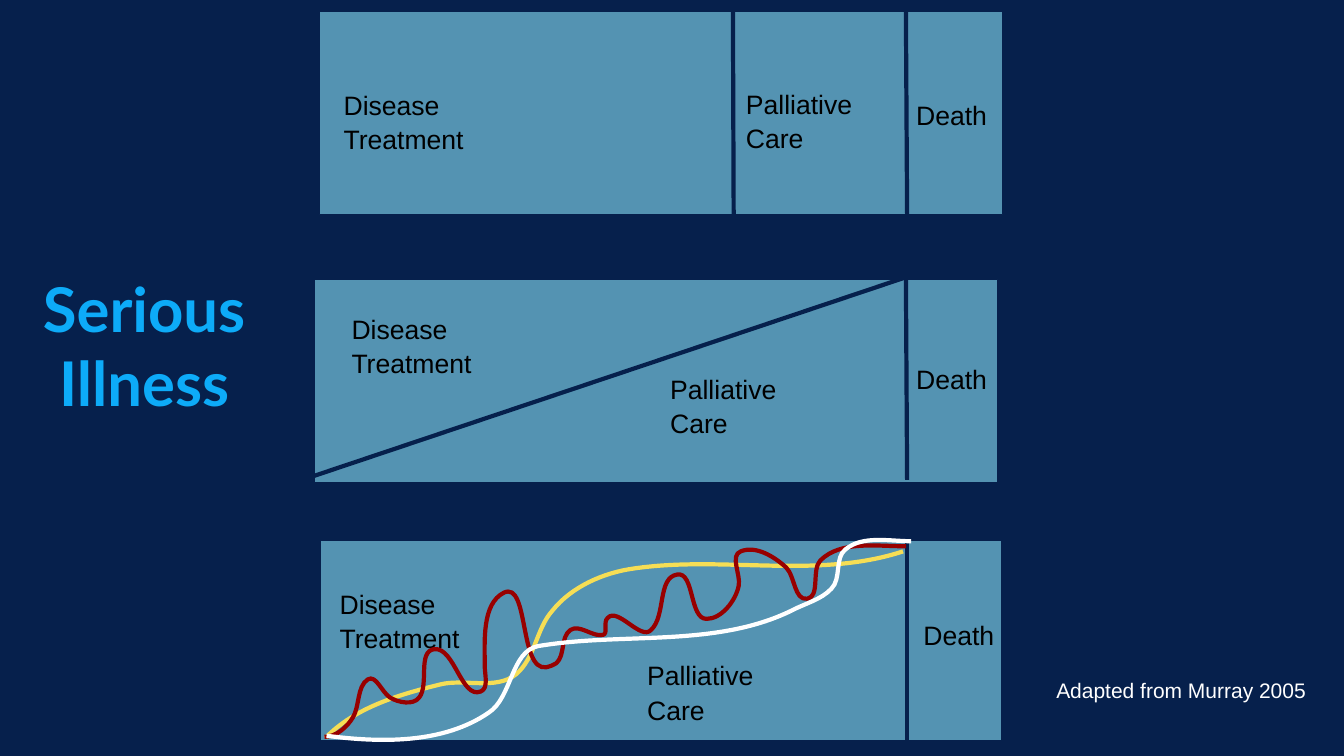
from lxml import etree
from pptx import Presentation
from pptx import util as u
from pptx.dml.color import RGBColor
from pptx.enum import shapes, text
from pptx.oxml.ns import qn

COLORS = {
    "navy": "06204C",
    "panel": "5493B2",
    "title": "0DABF8",
    "black": "000000",
    "white": "FFFFFF",
    "yellow": "F6DE55",
    "red": "980000",
}

LABEL = {"name": "Arial", "size": u.Pt(19), "color": "black"}
CREDIT = {"name": "Arial", "size": u.Pt(15), "color": "white"}
TITLE = {"name": "Lato", "size": u.Pt(44), "bold": True, "color": "title"}

PANEL_SIZE = (17.22, 5.11)
PANELS = [(8.05, 0.3, 0.75), (7.92, 7.04, 0.75), (8.05, 13.59, 3)]

DIVIDERS = [
    (18.47, 0.23, 18.49, 5.41),
    (22.83, 0.23, 22.86, 5.41),
    (22.83, 6.91, 22.86, 12.09),
    (22.86, 13.59, 22.86, 18.67),
    (7.92, 11.99, 22.76, 7.01),
]

LABELS = {
    ("Disease Treatment", 5.56, 2.31): [(8.33, 1.85), (8.53, 7.49), (8.23, 14.43)],
    ("Palliative Care", 4.5, 2.31): [(18.47, 1.83), (16.56, 9.02), (15.98, 16.23)],
    ("Death", 3.28, 1.5): [(22.76, 2.11), (22.76, 8.76), (22.94, 15.21)],
}

CURVE_UNIT = u.Cm(0.0254)
CURVES = {
    "yellow": [
        (323, 732), (352, 702), (396, 689), (437, 679),
        (461, 673), (492, 685), (512, 669), (531, 653), (532, 624), (548, 606),
        (567, 582), (599, 568), (629, 564), (717, 551), (811, 575), (896, 547),
    ],
    "red": [
        (322, 731), (333, 731), (344, 722), (350, 712),
        (357, 701), (354, 681), (365, 674), (373, 669), (379, 687), (387, 692),
        (395, 697), (410, 700), (416, 692), (426, 679), (414, 646), (431, 644),
        (451, 642), (458, 694), (477, 686), (485, 683), (481, 669), (481, 661),
        (481, 636), (478, 599), (500, 588), (525, 576), (515, 666), (542, 662),
        (546, 661), (549, 660), (552, 658), (561, 650), (556, 632), (566, 625),
        (575, 619), (588, 632), (598, 630), (604, 629), (598, 617), (603, 613),
        (613, 602), (636, 636), (646, 625), (661, 611), (652, 573), (672, 570),
        (689, 567), (684, 614), (701, 614), (716, 614), (730, 596), (733, 581),
        (735, 570), (724, 551), (735, 547), (750, 541), (768, 552), (780, 563),
        (789, 572), (788, 596), (801, 594), (814, 592), (805, 565), (814, 556),
        (834, 536), (870, 542), (899, 542),
    ],
    "white": [
        (324, 730), (378, 737), (440, 738), (485, 707),
        (508, 692), (507, 646), (534, 641), (617, 627), (709, 643), (785, 606),
        (798, 599), (815, 595), (825, 584), (835, 574), (828, 553), (839, 545),
        (856, 531), (882, 537), (904, 537),
    ],
}


class SlideBuilder:
    def __init__(self, slide):
        self.s = slide
        self.fill(slide.background.fill, "navy")

    def fill(self, fill, color):
        fill.solid()
        fill.fore_color.rgb = RGBColor.from_string(COLORS[color])

    def stroke(self, line, color, width):
        self.fill(line.fill, color)
        line.width = u.Pt(width)

    def place(self, sp, *box):
        for key, value in zip(("left", "top", "width", "height"), box):
            setattr(sp, key, u.Cm(value))

    def set_text(self, tf, content, style, inset, spacing):
        tf.word_wrap = True
        tf.auto_size = text.MSO_AUTO_SIZE.NONE
        for side, value in zip(("left", "top", "right", "bottom"), inset):
            setattr(tf, "margin_" + side, u.Cm(value))
        p = tf.paragraphs[0]
        p.line_spacing = spacing
        r = p.add_run()
        r.text = content
        for key, value in style.items():
            if key == "color":
                r.font.color.rgb = RGBColor.from_string(COLORS[value])
            else:
                setattr(r.font, key, value)
        return p

    def title(self, content, *box):
        sp = self.s.shapes.title
        self.place(sp, *box)
        p = self.set_text(sp.text_frame, content, TITLE, (0, 0.03, 0, 0.03), 1.0)
        p.alignment = text.PP_ALIGN.CENTER
        sp.text_frame.vertical_anchor = text.MSO_ANCHOR.MIDDLE

    def label(self, content, style, *box):
        sp = self.s.shapes.add_textbox(*map(u.Cm, box))
        self.set_text(sp.text_frame, content, style, [0.33] * 4, 1.07)

    def panel(self, left, top, border):
        box = map(u.Cm, (left, top, *PANEL_SIZE))
        sp = self.s.shapes.add_shape(shapes.MSO_SHAPE.RECTANGLE, *box)
        sp.shadow.inherit = False
        self.fill(sp.fill, "panel")
        self.stroke(sp.line, "navy", border)

    def divider(self, *ends):
        line = self.s.shapes.add_connector(shapes.MSO_CONNECTOR.STRAIGHT, *map(u.Cm, ends))
        self.stroke(line.line, "navy", 3)
        etree.SubElement(line._element.spPr, qn("a:effectLst"))

    def curve(self, color, points):
        builder = self.s.shapes.build_freeform(*points[0], scale=CURVE_UNIT)
        builder.add_line_segments(points[1:], close=False)
        sp = builder.convert_to_shape()
        sp.shadow.inherit = False
        sp.fill.background()
        self.stroke(sp.line, color, 3)
        outline = next(sp._element.iter(qn("a:path")))
        segments = outline.findall(qn("a:lnTo"))
        for i in range(0, len(segments), 3):
            bezier = etree.SubElement(outline, qn("a:cubicBezTo"))
            for segment in segments[i:i + 3]:
                bezier.append(segment[0])
                outline.remove(segment)


def main():
    prs = Presentation()
    prs.slide_width, prs.slide_height = u.Cm(33.87), u.Cm(19.05)
    slide = SlideBuilder(prs.slides.add_slide(prs.slide_layouts[5]))
    slide.title("Serious Illness", 0.64, 0.64, 5.99, 16.08)
    for panel in PANELS:
        slide.panel(*panel)
    for ends in DIVIDERS:
        slide.divider(*ends)
    for (content, width, height), spots in LABELS.items():
        for left, top in spots:
            slide.label(content, LABEL, left, top, width, height)
    for color, points in CURVES.items():
        slide.curve(color, points)
    slide.label("Adapted from Murray 2005", CREDIT, 26.29, 16.71, 7.37, 1.32)
    prs.save("out.pptx")


if __name__ == "__main__":
    main()
